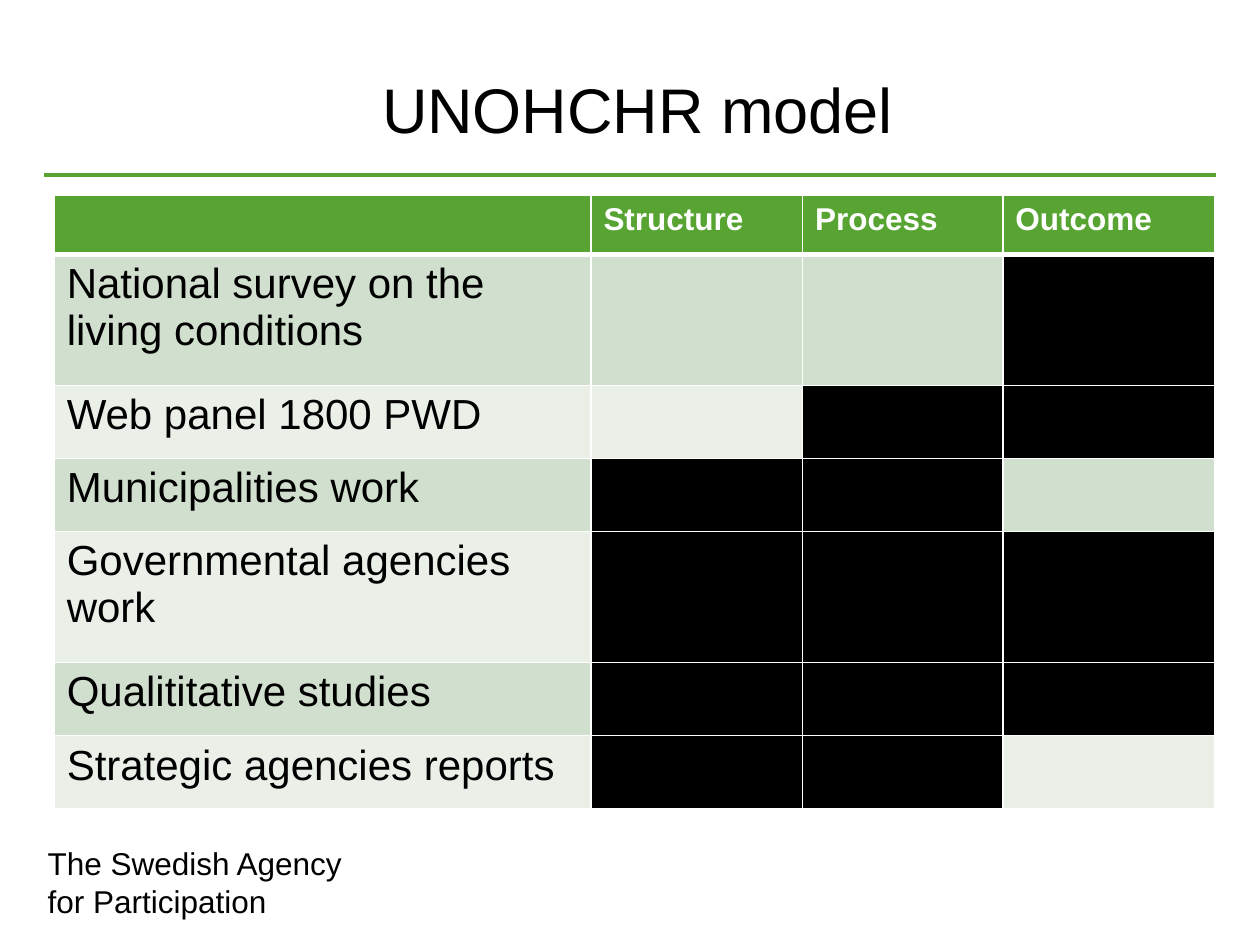
import pptx
import pptx.dml.color
import pptx.enum.shapes
import pptx.enum.text
import pptx.oxml.ns
import pptx.util
from lxml import etree

Inches = pptx.util.Inches
Pt = pptx.util.Pt

COLORS = {
    "green": "57A432",
    "dark_band": "D1E0CE",
    "light_band": "EAF0E8",
    "black": "000000",
    "white": "FFFFFF",
}

COLUMN_WIDTHS = [4.26, 1.68, 1.59, 1.68]
ROW_HEIGHTS = [0.47, 1.04, 0.58, 0.58, 1.04, 0.58, 0.58]
HEADINGS = ["", "Structure", "Process", "Outcome"]
# Each source with the indicator types it covers
SOURCES = [
    ("National survey on the living conditions", {"Outcome"}),
    ("Web panel 1800 PWD", {"Process", "Outcome"}),
    ("Municipalities work", {"Structure", "Process"}),
    ("Governmental agencies work", {"Structure", "Process", "Outcome"}),
    ("Qualititative studies", {"Structure", "Process", "Outcome"}),
    ("Strategic agencies reports", {"Structure", "Process"}),
]

HEADING_FONT = {"name": "Arial", "size": Pt(18), "bold": True}
SOURCE_FONT = {"name": "Arial", "size": Pt(24), "bold": False}
TITLE_FONT = {"name": "Arial", "size": Pt(36)}
FOOTER_FONT = {"name": "Arial", "size": Pt(18)}


def rgb(color):
    return pptx.dml.color.RGBColor.from_string(COLORS[color])


def set_attributes(target, values):
    for name, value in values.items():
        setattr(target, name, value)


def write_text(frame, text, font, color="black"):
    span = frame.paragraphs[0].add_run()
    span.text = text
    set_attributes(span.font, font)
    span.font.color.rgb = rgb(color)


def add_text_box(page, place, text, font, **frame_format):
    box = page.shapes.add_textbox(*map(Inches, place))
    set_attributes(box.text_frame, {"word_wrap": True, **frame_format})
    write_text(box.text_frame, text, font)
    return box


def add_rule(page, left, right, top):
    rule = page.shapes.add_connector(
        pptx.enum.shapes.MSO_CONNECTOR.STRAIGHT,
        Inches(left), Inches(top), Inches(right), Inches(top))
    rule.line.color.rgb = rgb("green")
    rule.line.width = Pt(2.25)
    etree.SubElement(rule._element.spPr, pptx.oxml.ns.qn("a:effectLst"))


def set_borders(cell, top, bottom):
    """Draw white cell borders, one point wide at the sides."""
    properties = cell._tc.get_or_add_tcPr()
    qn = pptx.oxml.ns.qn
    widths = {"a:lnL": 1, "a:lnR": 1, "a:lnT": top, "a:lnB": bottom}
    for tag, width in widths.items():
        border = etree.SubElement(properties, qn(tag), w=str(Pt(width)))
        fill = etree.SubElement(border, qn("a:solidFill"))
        etree.SubElement(fill, qn("a:srgbClr"), val=COLORS["white"])


def format_cell(cell, fill, top=1, bottom=1):
    set_borders(cell, top, bottom)
    cell.fill.solid()
    cell.fill.fore_color.rgb = rgb(fill)


def add_coverage_table(page):
    table = page.shapes.add_table(
        len(ROW_HEIGHTS), len(COLUMN_WIDTHS), Inches(0.43), Inches(1.55),
        Inches(sum(COLUMN_WIDTHS)), Inches(sum(ROW_HEIGHTS))).table
    for column, width in zip(table.columns, COLUMN_WIDTHS):
        column.width = Inches(width)
    for row, height in zip(table.rows, ROW_HEIGHTS):
        row.height = Inches(height)

    for column, heading in enumerate(HEADINGS):
        cell = table.cell(0, column)
        format_cell(cell, "green", bottom=3)
        if heading:
            write_text(cell.text_frame, heading, HEADING_FONT, "white")

    for row, (source, covered) in enumerate(SOURCES, start=1):
        band = "dark_band" if row % 2 else "light_band"
        for column, heading in enumerate(HEADINGS):
            fill = "black" if heading in covered else band
            format_cell(table.cell(row, column), fill, top=3 if row == 1 else 1)
        write_text(table.cell(row, 0).text_frame, source, SOURCE_FONT)


def main():
    deck = pptx.Presentation()
    set_attributes(deck, {"slide_width": Inches(10), "slide_height": Inches(7.5)})
    page = deck.slides.add_slide(deck.slide_layouts[6])

    add_rule(page, 0.35, 9.65, 1.39)
    footer = add_text_box(page, (0.28, 6.65, 2.83, 0.71),
                          "The Swedish Agency for Participation", FOOTER_FONT)
    footer.fill.solid()
    footer.fill.fore_color.rgb = rgb("white")

    title = add_text_box(
        page, (0.12, 0.29, 9.88, 0.87), "UNOHCHR model", TITLE_FONT,
        vertical_anchor=pptx.enum.text.MSO_ANCHOR.BOTTOM,
        margin_left=0, margin_right=0, margin_top=0, margin_bottom=0)
    title.text_frame.paragraphs[0].alignment = pptx.enum.text.PP_ALIGN.CENTER
    add_coverage_table(page)

    deck.save("out.pptx")


if __name__ == "__main__":
    main()
